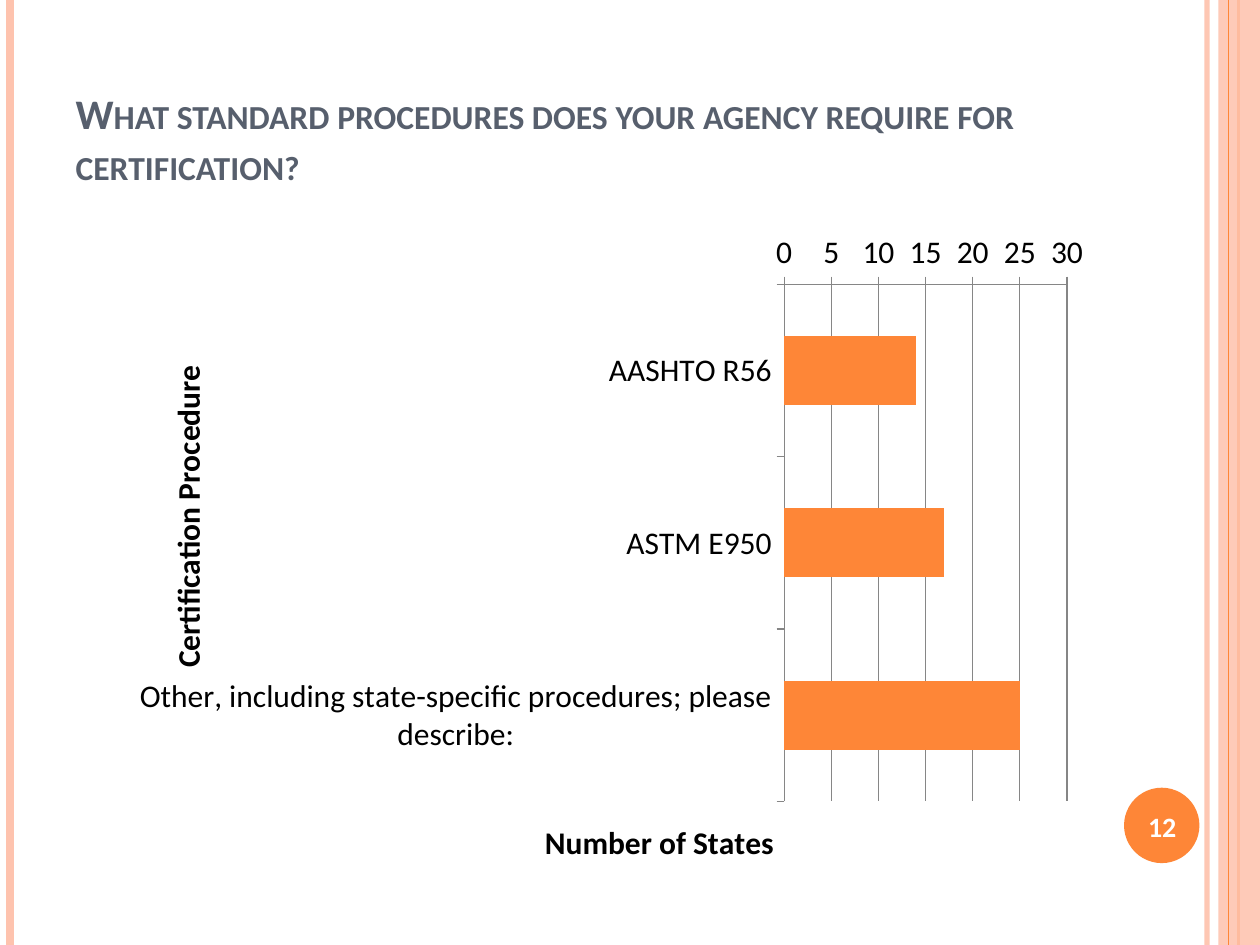
import lxml.etree
import pptx
import pptx.chart.data
import pptx.dml.color
import pptx.enum.chart
import pptx.enum.shapes
import pptx.enum.text
import pptx.oxml.ns
import pptx.util

Cm, Pt = pptx.util.Cm, pptx.util.Pt
RGBColor = pptx.dml.color.RGBColor
qn = pptx.oxml.ns.qn
MSO_SHAPE = pptx.enum.shapes.MSO_SHAPE
MSO_ANCHOR = pptx.enum.text.MSO_ANCHOR

ORANGE = RGBColor(0xFE, 0x86, 0x37)
PEACH = RGBColor(0xFE, 0xC3, 0xAE)
SLATE = RGBColor(0x57, 0x5F, 0x6D)
GRAY = RGBColor(0x86, 0x86, 0x86)
BLACK = RGBColor(0, 0, 0)
WHITE = RGBColor(0xFF, 0xFF, 0xFF)

CHART_WIDTH, CHART_HEIGHT = Cm(19.47), Cm(13.55)


def set_alpha(sp, percent):
    for clr in sp._element.spPr.iter(qn("a:srgbClr")):
        lxml.etree.SubElement(clr, qn("a:alpha"), val=str(percent * 1000))


def set_layout(parent, index, **lengths):
    layout = parent.find(qn("c:layout"))
    if layout is None:
        layout = parent.makeelement(qn("c:layout"))
        parent.insert(index, layout)
    manual = lxml.etree.SubElement(layout, qn("c:manualLayout"))
    if "w" in lengths:
        lxml.etree.SubElement(manual, qn("c:layoutTarget"), val="inner")
    for mode in ("xMode", "yMode"):
        lxml.etree.SubElement(manual, qn("c:" + mode), val="edge")
    for name, length in lengths.items():
        total = CHART_WIDTH if name in "xw" else CHART_HEIGHT
        lxml.etree.SubElement(manual, qn("c:" + name), val=str(length / total))


prs = pptx.Presentation()
prs.slide_width, prs.slide_height = Cm(25.4), Cm(19.05)
s = prs.slides.add_slide(prs.slide_layouts[5])

for x, color, width, alpha in [
    (24.33, PEACH, 3, 93),
    (0.2, PEACH, 4.5, 100),
    (24.97, ORANGE, 1.5, 100),
    (24.77, ORANGE, 0.75, 100),
]:
    rule = s.shapes.add_connector(
        pptx.enum.shapes.MSO_CONNECTOR.STRAIGHT, Cm(x), 0, Cm(x), prs.slide_height)
    rule.line.color.rgb = color
    rule.line.width = Pt(width)
    lxml.etree.SubElement(rule._element.spPr, qn("a:effectLst"))
    if alpha < 100:
        set_alpha(rule, alpha)

band = s.shapes.add_shape(MSO_SHAPE.RECTANGLE, Cm(24.56), 0, Cm(0.84), prs.slide_height)
badge = s.shapes.add_shape(MSO_SHAPE.OVAL, Cm(22.66), Cm(15.88), Cm(1.52), Cm(1.52))
for sp, color in [(band, PEACH), (badge, ORANGE)]:
    sp.fill.solid()
    sp.fill.fore_color.rgb = color
    sp.line.fill.background()
    sp.shadow.inherit = False
set_alpha(band, 87)
rule._element.addprevious(band._element)

title = s.shapes.title
title.left, title.top, title.width, title.height = Cm(1.27), Cm(0.76), Cm(20.75), Cm(3.94)
tf = title.text_frame
tf.text = "What standard procedures\u00a0does your agency require for certification?"
tf.word_wrap = True
tf.auto_size = pptx.enum.text.MSO_AUTO_SIZE.NONE
tf.vertical_anchor = MSO_ANCHOR.BOTTOM
tf.margin_bottom = Cm(0.9)
p = tf.paragraphs[0]
p.alignment = pptx.enum.text.PP_ALIGN.LEFT
r = p.runs[0]
r.font.name, r.font.size, r.font.bold = "Calibri", Pt(24), True
r.font.color.rgb = SLATE
r.font._element.set("cap", "small")

data = pptx.chart.data.CategoryChartData()
data.categories = [
    "AASHTO R56",
    "ASTM E950",
    "Other, including state-specific procedures; please describe:",
]
data.add_series("Series 1", (14, 17, 25))
chart = s.shapes.add_chart(
    pptx.enum.chart.XL_CHART_TYPE.BAR_CLUSTERED,
    Cm(2.75), Cm(4.45), CHART_WIDTH, CHART_HEIGHT, data).chart
chart.has_legend = False
chart.has_title = False
chart.font.name, chart.font.size = "Calibri", Pt(18)
chart.font.color.rgb = BLACK
plot = chart.plots[0]
plot.gap_width = 150
plot.vary_by_categories = False
bars = plot.series[0]
bars.format.fill.solid()
bars.format.fill.fore_color.rgb = ORANGE
set_layout(chart._chartSpace.chart.plotArea, 0,
           x=Cm(13.06), y=Cm(1.28), w=Cm(5.7), h=Cm(10.43))

for axis, text, x, y in [
    (chart.category_axis, "Certification Procedure", 0.48, 2.8),
    (chart.value_axis, "Number of States", 8.12, 11.97),
]:
    axis.major_tick_mark = pptx.enum.chart.XL_TICK_MARK.OUTSIDE
    axis.format.line.color.rgb = GRAY
    axis.format.line.width = Pt(0.75)
    tf = axis.axis_title.text_frame
    tf.text = text
    r = tf.paragraphs[0].runs[0]
    r.font.name, r.font.size, r.font.bold = "Calibri", Pt(18), True
    r.font.color.rgb = BLACK
    set_layout(axis.axis_title._element, 1, x=Cm(x), y=Cm(y))

body = chart.category_axis.axis_title.text_frame._txBody.bodyPr
body.set("rot", "-5400000")
body.set("vert", "horz")
chart.category_axis.reverse_order = True
val_axis = chart.value_axis
val_axis.minimum_scale, val_axis.maximum_scale, val_axis.major_unit = 0, 30, 5
val_axis.has_major_gridlines = True
val_axis.major_gridlines.format.line.color.rgb = GRAY
val_axis.major_gridlines.format.line.width = Pt(0.75)

number = s.shapes.add_textbox(Cm(22.58), Cm(15.93), Cm(1.7), Cm(1.45))
tf = number.text_frame
tf.text = "12"
tf.word_wrap = True
tf.vertical_anchor = MSO_ANCHOR.MIDDLE
p = tf.paragraphs[0]
p.alignment = pptx.enum.text.PP_ALIGN.CENTER
r = p.runs[0]
r.font.name, r.font.size, r.font.bold = "Calibri", Pt(16), True
r.font.color.rgb = WHITE

prs.save("out.pptx")
